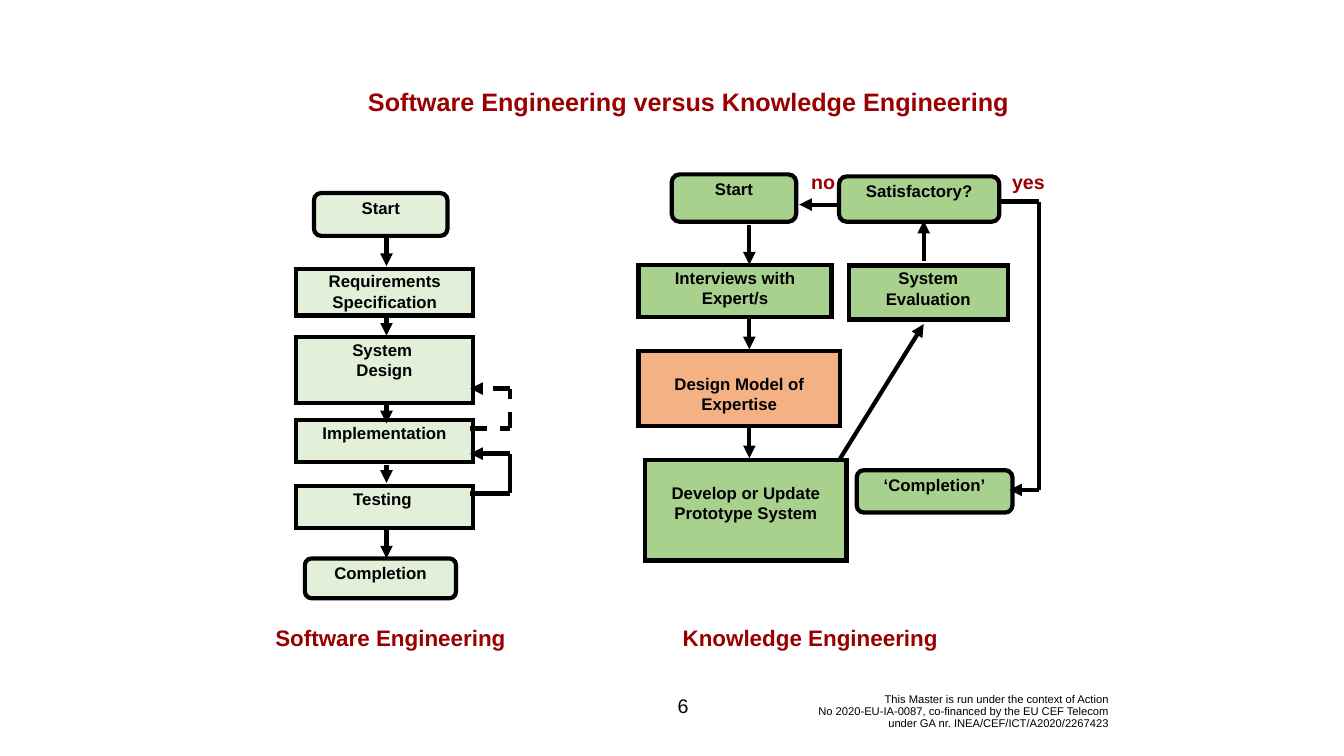
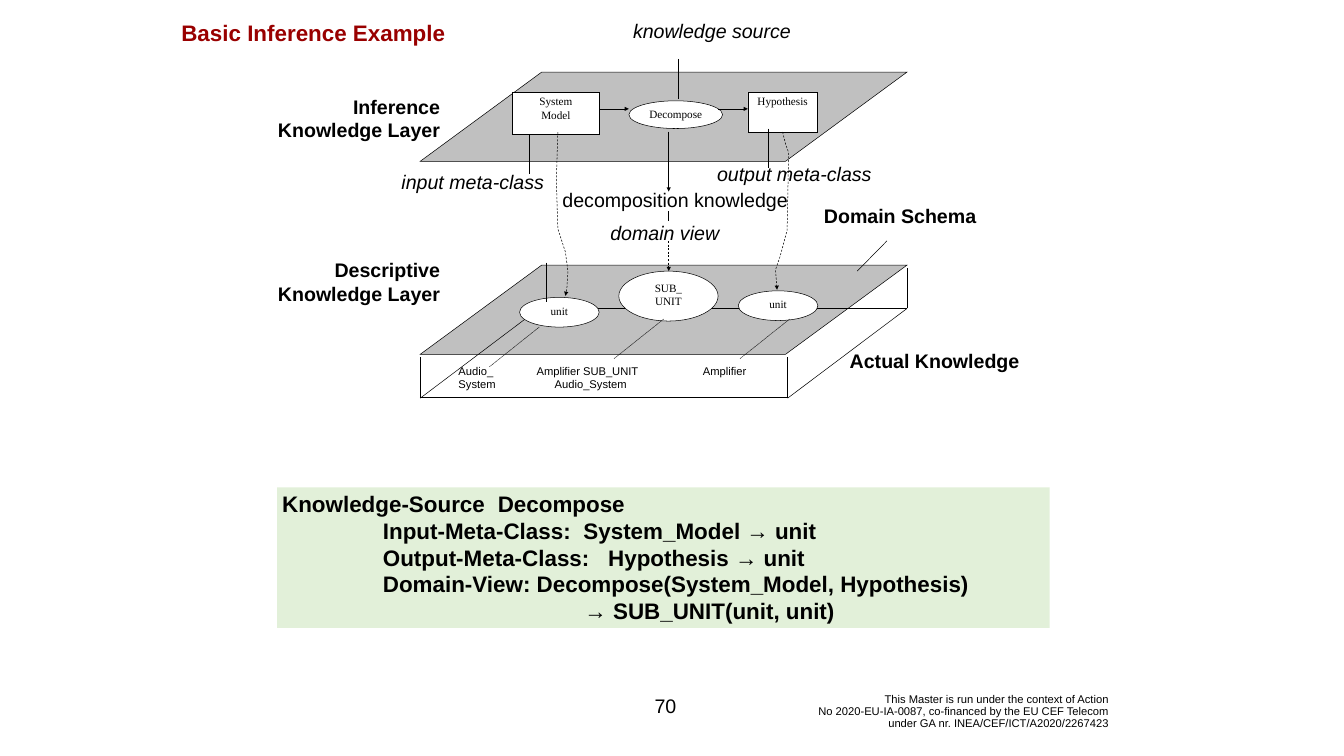
from itertools import pairwise

from lxml import etree
from pptx import Presentation
from pptx.dml.color import RGBColor
from pptx.enum.dml import MSO_LINE
from pptx.enum.shapes import MSO_CONNECTOR, MSO_SHAPE
from pptx.enum.text import MSO_ANCHOR, PP_ALIGN
from pptx.oxml.ns import qn
from pptx.util import Emu, Pt

PX = 9144  # 100 px to the inch
COLOURS = {
    "ink": "000000",
    "title": "990000",
    "pale": "E2F0D9",
    "green": "A9D18E",
    "orange": "F4B183",
    "plane": "C0C0C0",
    "white": "FFFFFF",
}
SANS, SERIF = "Arial", "Times New Roman"
LEFT, CENTER, RIGHT = PP_ALIGN.LEFT, PP_ALIGN.CENTER, PP_ALIGN.RIGHT
TOP, MIDDLE = MSO_ANCHOR.TOP, MSO_ANCHOR.MIDDLE
PROCESS = MSO_SHAPE.FLOWCHART_PROCESS
TERMINAL = MSO_SHAPE.FLOWCHART_ALTERNATE_PROCESS
PARALLELOGRAM, RECT, OVAL = MSO_SHAPE.PARALLELOGRAM, MSO_SHAPE.RECTANGLE, MSO_SHAPE.OVAL
STRAIGHT = MSO_CONNECTOR.STRAIGHT
DASH, DOT = MSO_LINE.DASH, MSO_LINE.ROUND_DOT
THICK, THIN = 6, 0.75
FOOTER = (
    "This Master is run under the context of Action\n"
    "No 2020-EU-IA-0087, co-financed by the EU CEF Telecom\n"
    "under GA nr. INEA/CEF/ICT/A2020/2267423"
)


def px(*lengths):
    return [Emu(length * PX) for length in lengths]


def colour(name):
    return RGBColor.from_string(COLOURS[name])


# Text

def set_tabs(paragraph, stops):
    tab_list = etree.SubElement(paragraph._p.get_or_add_pPr(), qn("a:tabLst"))
    for stop in stops:
        etree.SubElement(tab_list, qn("a:tab"), pos=str(stop * PX), algn="l")


def write(shape, paragraphs, size, ink="ink", font=SANS, bold=False, italic=False,
          align=CENTER, anchor=TOP, spacing=None):
    """Each paragraph is a (text, tab stops) pair."""
    frame = shape.text_frame
    frame.word_wrap = True
    frame.vertical_anchor = anchor
    for index, (text, stops) in enumerate(paragraphs):
        paragraph = frame.add_paragraph() if index else frame.paragraphs[0]
        paragraph.alignment = align
        if spacing:
            paragraph.line_spacing = spacing
        if stops:
            set_tabs(paragraph, stops)
        for row, line in enumerate(text.split("\n")):
            if row:
                paragraph.add_line_break()
            run = paragraph.add_run()
            run.text = line
            run.font.name = font
            run.font.size = Pt(size)
            run.font.bold = bold
            run.font.italic = italic
            run.font.color.rgb = colour(ink)


def plain(*texts):
    return [(text, ()) for text in texts]


def label(slide, box, text, size=28, **style):
    write(slide.shapes.add_textbox(*px(*box)), plain(text), size, **style)


def heading(slide, box, text, size=32, align=CENTER):
    label(slide, box, text, size, ink="title", bold=True, align=align)


# Outlines, lines and shapes

def style_line(shape, width, dash=None, arrow=False):
    line = shape.line
    line.color.rgb = colour("ink")
    line.width = Pt(width)
    if dash:
        line.dash_style = dash
    ln = shape._element.spPr.find(qn("a:ln"))
    etree.SubElement(ln, qn("a:miter"), lim="800000")
    if arrow:
        etree.SubElement(ln, qn("a:tailEnd"), type="triangle")


def route(slide, *points, width=THIN, dash=None, arrow=False):
    """Joins the points by straight lines; an arrowhead goes on the last."""
    for start, end in pairwise(points):
        connector = slide.shapes.add_connector(STRAIGHT, *px(*start, *end))
        style_line(connector, width, dash, arrow and end == points[-1])
        etree.SubElement(connector._element.spPr, qn("a:effectLst"))


def trail(slide, points):
    """Dashed open outline that ends in an arrowhead."""
    builder = slide.shapes.build_freeform(*points[0], scale=PX)
    builder.add_line_segments(points[1:], close=False)
    outline = builder.convert_to_shape()
    outline.shadow.inherit = False
    outline.fill.background()
    style_line(outline, THIN, DASH, arrow=True)


def block(slide, kind, box, fill, width=None):
    shape = slide.shapes.add_shape(kind, *px(*box))
    shape.shadow.inherit = False
    shape.fill.solid()
    shape.fill.fore_color.rgb = colour(fill)
    if width:
        style_line(shape, width)
    else:
        shape.line.fill.background()
    return shape


def step(slide, kind, box, fill, *texts, lead=5):
    shape = block(slide, kind, box, fill, THICK)
    shape.text_frame.margin_top = px(lead)[0]
    write(shape, plain(*texts), 24, bold=True)


def concept(slide, kind, box, *texts):
    write(block(slide, kind, box, "white", THIN), plain(*texts), 16, font=SERIF)


# Slides

def new_slide(deck, number, number_align):
    slide = deck.slides.add_slide(deck.slide_layouts[6])
    label(slide, (1502, 1374, 708, 76), FOOTER, 16, align=RIGHT, anchor=MIDDLE, spacing=0.9)
    label(slide, (1265, 1361, 111, 80), number, align=number_align, anchor=MIDDLE)
    return slide


def software_flow(slide):
    for kind, box, *texts in (
        (PROCESS, (588, 669, 350, 131), "System ", "Design"),
        (PROCESS, (588, 833, 350, 83), "Implementation"),
        (PROCESS, (588, 965, 351, 83), "Testing "),
    ):
        step(slide, kind, box, "pale", *texts)
    for top, bottom in ((469, 528), (626, 666), (800, 840), (922, 958), (1049, 1108)):
        route(slide, (767, top), (767, bottom), width=THICK, arrow=True)
    # Feedback loops
    for bottom, dash in ((979, None), (850, DASH)):
        top = bottom - 79
        route(slide, (933, bottom), (1012, bottom), (1012, top), (933, top),
              width=THICK, dash=dash, arrow=True)
    for kind, box, text in (
        (TERMINAL, (623, 383, 265, 85), "Start"),
        (PROCESS, (588, 533, 351, 93), "Requirements Specification"),
        (TERMINAL, (605, 1108, 300, 79), "Completion"),
    ):
        step(slide, kind, box, "pale", text)
    heading(slide, (500, 1233, 550, 64), "Software Engineering")


def knowledge_flow(slide):
    for kind, box, text in (
        (PROCESS, (1267, 526, 383, 103), "Interviews with Expert/s"),
        (PROCESS, (1684, 527, 316, 107), "System Evaluation"),
        (TERMINAL, (1700, 933, 309, 84), "‘Completion’"),
        (TERMINAL, (1333, 346, 247, 94), "Start"),
        (TERMINAL, (1665, 350, 318, 90), "Satisfactory?"),
    ):
        step(slide, kind, box, "green", text)
    step(slide, PROCESS, (1280, 912, 400, 200), "green",
         "Develop or Update Prototype System", lead=45)
    step(slide, PROCESS, (1267, 696, 400, 150), "orange",
         "Design Model of", "Expertise", lead=45)
    for points in (
        ((1487, 446), (1487, 525)),
        ((1487, 633), (1487, 693)),
        ((1487, 850), (1487, 909)),
        ((1833, 517), (1833, 438)),
        ((1665, 406), (1586, 406)),
        ((1983, 400), (2062, 400), (2062, 972), (2003, 972)),
        ((1667, 910), (1833, 643)),
    ):
        route(slide, *points, width=THICK, arrow=True)
    for left, answer in ((1983, "yes"), (1567, "no")):
        heading(slide, (left, 333, 100, 57), answer, 28, RIGHT)
    heading(slide, (1333, 1233, 550, 64), "Knowledge Engineering")


def layer_planes(slide):
    for top in (143, 526):
        plane = block(slide, PARALLELOGRAM, (834, top, 966, 177), "plane", THIN)
        plane.adjustments[0] = 1.362
    # Edges of the solid below the descriptive layer
    route(slide, (833, 709), (833, 788), (1563, 788), (1563, 709))
    route(slide, (1563, 790), (1800, 612), (1800, 532))
    route(slide, (834, 790), (1070, 612), (1800, 612))
    route(slide, (1701, 538), (1760, 478))


def layer_concepts(slide):
    for kind, box, *texts in (
        (OVAL, (1248, 200, 186, 55), "Decompose"),
        (RECT, (1017, 183, 172, 84), "System", "Model"),
        (RECT, (1484, 183, 138, 79), "Hypothesis"),
        (OVAL, (1031, 590, 158, 59), "unit"),
        (OVAL, (1465, 577, 158, 59), "unit"),
        (OVAL, (1228, 538, 197, 99), "SUB_", "UNIT"),
    ):
        concept(slide, kind, box, *texts)


def layer_links(slide):
    for left in (1189, 1425):
        route(slide, (left, 216), (left + 59, 216), arrow=True)
    route(slide, (1327, 261), (1327, 380), arrow=True)
    route(slide, (1327, 419), (1327, 439))
    route(slide, (1327, 478), (1327, 538), dash=DASH, arrow=True)
    trail(slide, [(1107, 262), (1104, 357), (1107, 454), (1122, 500),
                  (1127, 538), (1125, 572), (1122, 587)])
    trail(slide, [(1553, 262), (1559, 286), (1565, 303), (1562, 457),
                  (1548, 509), (1539, 535), (1542, 575)])
    # Pointers from the captions
    for x, top in ((1524, 255), (1346, 117), (1083, 521), (1050, 267)):
        route(slide, (x, top), (x, top + 79))
    # Pointers to the instances
    for x, top in ((1070, 649), (1317, 633), (1567, 633)):
        route(slide, (x, top), (x - 99, top + 79), dash=DOT)


def layer_captions(slide):
    for box, text, align in (
        ((1217, 33, 362, 57), "knowledge source", RIGHT),
        ((717, 333, 383, 57), "input meta-class ", RIGHT),
        ((1367, 317, 383, 57), "output meta-class ", RIGHT),
        ((1133, 433, 383, 57), "domain view ", CENTER),
    ):
        label(slide, box, text, italic=True, align=align)
    label(slide, (1100, 367, 479, 57), "decomposition knowledge")
    for box, text, align in (
        ((500, 183, 383, 104), "Inference Knowledge Layer", RIGHT),
        ((500, 507, 383, 104), "Descriptive Knowledge Layer", RIGHT),
        ((1600, 400, 383, 57), "Domain Schema ", CENTER),
        ((1663, 687, 383, 57), "Actual Knowledge", CENTER),
    ):
        label(slide, box, text, bold=True, align=align)
    instances = slide.shapes.add_textbox(*px(900, 717, 750, 64))
    write(instances, [
        ("Audio_\tAmplifier SUB_UNIT\tAmplifier", (155, 485)),
        ("System\tAudio_System", (191,)),
    ], 16, align=LEFT)


def knowledge_source(slide):
    definition = block(slide, RECT, (550, 967, 1533, 279), "pale")
    write(definition, [
        ("Knowledge-Source\tDecompose", (428,)),
        ("\tInput-Meta-Class:\tSystem_Model → unit", (200, 598)),
        ("\tOutput-Meta-Class:\tHypothesis → unit", (200, 647)),
        ("\tDomain-View: Decompose(System_Model, Hypothesis)", (200,)),
        ("\t→ SUB_UNIT(unit, unit)", (600,)),
    ], 32, bold=True, align=LEFT)


def main():
    deck = Presentation()
    deck.slide_width, deck.slide_height = px(2667, 1500)

    # Two development processes side by side
    comparison = new_slide(deck, "6", RIGHT)
    software_flow(comparison)
    heading(comparison, (550, 167, 1633, 71),
            "Software Engineering versus Knowledge Engineering", 36)
    knowledge_flow(comparison)

    # Knowledge layers and the definition below them
    inference = new_slide(deck, "70", CENTER)
    layer_planes(inference)
    layer_concepts(inference)
    layer_links(inference)
    heading(inference, (350, 33, 617, 64), "Basic Inference Example", align=LEFT)
    layer_captions(inference)
    knowledge_source(inference)

    deck.save("out.pptx")


if __name__ == "__main__":
    main()
